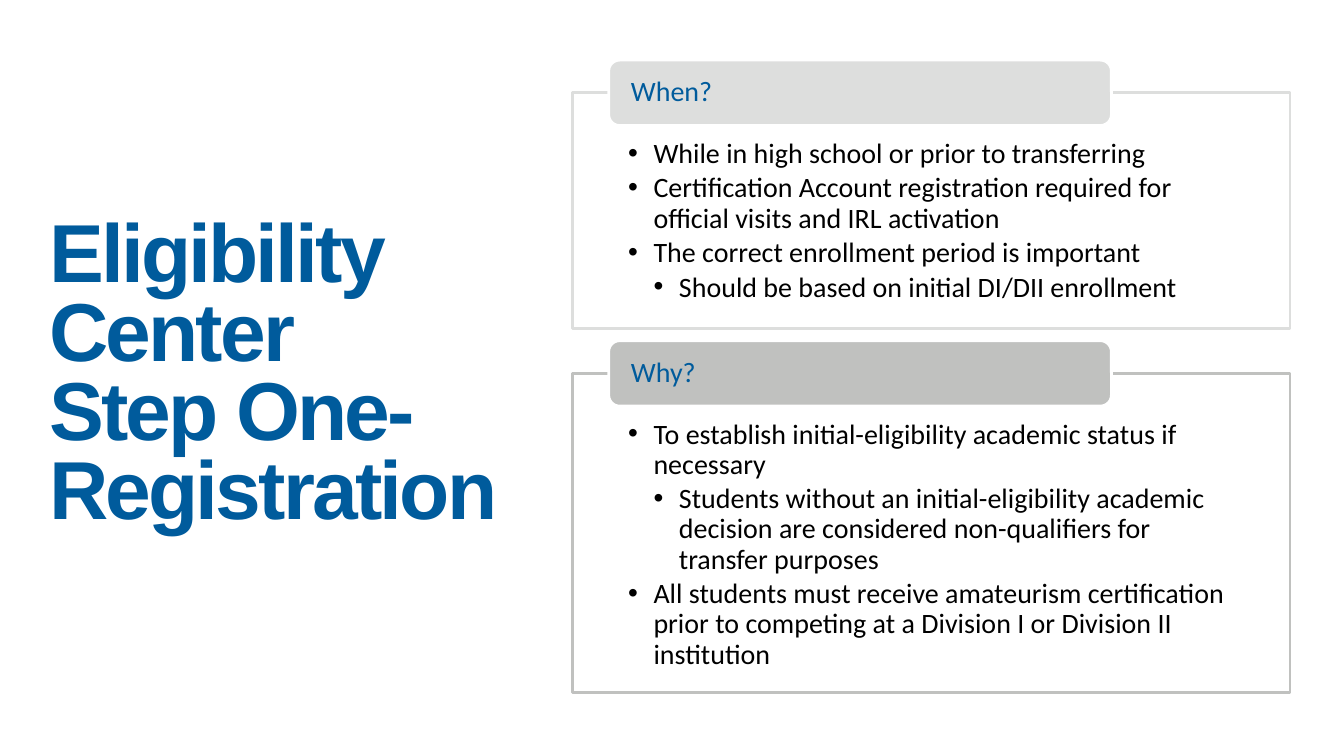
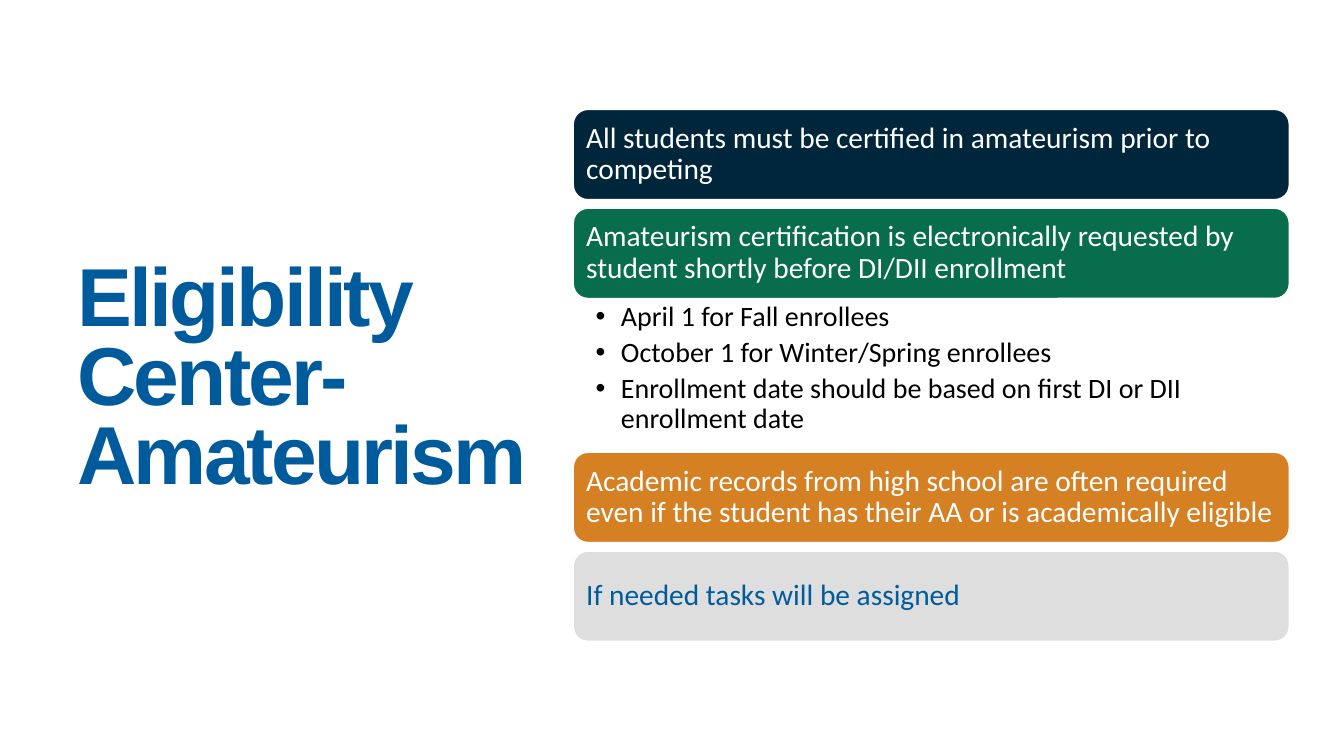
from dataclasses import dataclass

from lxml.etree import SubElement
from pptx import Presentation
from pptx.dml.color import RGBColor
from pptx.enum.shapes import MSO_SHAPE as Preset
from pptx.enum.text import MSO_ANCHOR as Anchor, MSO_AUTO_SIZE as AutoSize, PP_ALIGN as Align
from pptx.oxml.ns import qn
from pptx.util import Cm, Pt


@dataclass(frozen=True)
class Theme:
    blue: str = "005B9C"
    navy: str = "00263B"
    green: str = "086D4D"
    orange: str = "D68024"
    light_gray: str = "DDDEDD"
    mid_gray: str = "C0C1BF"
    white: str = "FFFFFF"
    black: str = "000000"
    title_font: str = "Arial"
    body_font: str = "Calibri"
    title_size: float = 58.7
    card_size: float = 21
    body_size: float = 20
    line_width: float = 2
    title_tracking: int = -200
    bullet_indent: float = 0.64


THEME = Theme()
CONTENT_LEFT, CONTENT_WIDTH = 14.43, 18.08


def apply_format(target, values):
    for name, value in values.items():
        setattr(target, name, value)


def format_runs(paragraph, font_name, size, color, bold=False):
    for run in paragraph.runs:
        apply_format(run.font, {"name": font_name, "size": Pt(size), "bold": bold})
        run.font.color.rgb = RGBColor.from_string(color)


def set_frame(frame, anchor, insets=(0.25, 0.13, 0.25, 0.13)):
    """Insets are left, top, right and bottom, in centimetres."""
    sides = ("margin_left", "margin_top", "margin_right", "margin_bottom")
    apply_format(frame, {"word_wrap": True, "auto_size": AutoSize.NONE, "vertical_anchor": anchor})
    apply_format(frame, dict(zip(sides, map(Cm, insets))))


def add_title(slide, box, text):
    title = slide.shapes.title
    apply_format(title, dict(zip(("left", "top", "width", "height"), map(Cm, box))))
    set_frame(title.text_frame, Anchor.MIDDLE)
    paragraph = title.text_frame.paragraphs[0]
    paragraph.text = text
    apply_format(paragraph, {"alignment": Align.LEFT, "line_spacing": 0.8})
    format_runs(paragraph, THEME.title_font, THEME.title_size, THEME.blue, bold=True)
    for run in paragraph.runs:
        run.font._element.set("spc", str(THEME.title_tracking))


def add_box(slide, preset, box, fill, line):
    shape = slide.shapes.add_shape(preset, *map(Cm, box))
    shape.shadow.inherit = False
    shape.fill.solid()
    shape.fill.fore_color.rgb = RGBColor.from_string(fill)
    shape.line.color.rgb = RGBColor.from_string(line)
    shape.line.width = Pt(THEME.line_width)
    return shape


def add_label(slide, box, text, fill, color, size, insets):
    """Rounded box with one left-aligned statement."""
    shape = add_box(slide, Preset.ROUNDED_RECTANGLE, box, fill, THEME.white)
    set_frame(shape.text_frame, Anchor.MIDDLE, insets)
    paragraph = shape.text_frame.paragraphs[0]
    paragraph.text = text
    apply_format(paragraph, {"alignment": Align.LEFT, "line_spacing": 0.9})
    format_runs(paragraph, THEME.body_font, size, color)


def write_bullets(frame, items, space_after):
    """Items are (level, text) pairs; the first level is 1."""
    for index, (level, text) in enumerate(items):
        paragraph = frame.add_paragraph() if index else frame.paragraphs[0]
        paragraph.text = text
        paragraph.level = level
        properties = paragraph._p.get_or_add_pPr()
        properties.set("marL", str(Cm(THEME.bullet_indent * level)))
        properties.set("indent", str(-Cm(THEME.bullet_indent)))
        SubElement(properties, qn("a:buFont"), typeface=THEME.title_font)
        SubElement(properties, qn("a:buChar"), char="•")
        apply_format(paragraph, {"alignment": Align.LEFT, "line_spacing": 0.9,
                                 "space_before": Pt(0), "space_after": Pt(space_after)})
        format_runs(paragraph, THEME.body_font, THEME.body_size, THEME.black)


def add_panel(slide, box, heading, items, color):
    """Outlined box with bullets and a heading label across its top edge."""
    left, top, _, _ = box
    panel = add_box(slide, Preset.RECTANGLE, box, THEME.white, color)
    set_frame(panel.text_frame, Anchor.TOP, (1.4, 1.17, 1.4, 0.41))
    write_bullets(panel.text_frame, items, 3)
    label_height = 1.65
    add_label(slide, (left + 0.91, top - label_height / 2, 12.67, label_height), heading,
              color, THEME.blue, THEME.body_size, (0.48, 0, 0.48, 0))


def add_bullet_list(slide, box, items):
    text_box = slide.shapes.add_textbox(*map(Cm, box))
    set_frame(text_box.text_frame, Anchor.TOP, (0.58, 0.08, 0.41, 0.08))
    write_bullets(text_box.text_frame, items, 4)


def build_registration(slide):
    add_title(slide, (0.99, 1.88, 11.91, 15.27), "Eligibility Center \vStep One-Registration")
    panels = (
        ("When?", THEME.light_gray, 5.94, (
            (1, "While in high school or prior to transferring"),
            (1, "Certification Account registration required for official visits and IRL activation"),
            (1, "The correct enrollment period is important"),
            (2, "Should be based on initial DI/DII enrollment"))),
        ("Why?", THEME.mid_gray, 8.05, (
            (1, "To establish initial-eligibility academic status if necessary"),
            (2, "Students without an initial-eligibility academic decision are considered "
                "non-qualifiers for transfer purposes"),
            (1, "All students must receive amateurism certification prior to competing "
                "at a Division I or Division II institution"))),
    )
    top, gap = 2.34, 1.13
    for heading, color, height, items in panels:
        add_panel(slide, (CONTENT_LEFT, top, CONTENT_WIDTH, height), heading, items, color)
        top += height + gap


def build_amateurism(slide):
    add_title(slide, (1.7, 2.82, 11.89, 13.59), "Eligibility Center-Amateurism")
    cards = (
        ("All students must be certified in amateurism prior to competing",
         THEME.navy, THEME.white, ()),
        ("Amateurism certification is electronically requested by student shortly "
         "before DI/DII enrollment", THEME.green, THEME.white, (
             (1, "April 1 for Fall enrollees"),
             (1, "October 1 for Winter/Spring enrollees"),
             (1, "Enrollment date should be based on first DI or DII enrollment date"))),
        ("Academic records from high school are often required even if the student "
         "has their AA or is academically eligible", THEME.orange, THEME.white, ()),
        ("If needed tasks will be assigned", THEME.light_gray, THEME.blue, ()),
    )
    top, card_height, list_height, gap = 2.74, 2.31, 3.84, 0.18
    for text, fill, color, items in cards:
        add_label(slide, (CONTENT_LEFT, top, CONTENT_WIDTH, card_height), text,
                  fill, color, THEME.card_size, (0.23,) * 4)
        top += card_height
        if items:
            add_bullet_list(slide, (CONTENT_LEFT, top, CONTENT_WIDTH, list_height), items)
            top += list_height
        else:
            top += gap


def main():
    presentation = Presentation()
    apply_format(presentation, {"slide_width": Cm(33.87), "slide_height": Cm(19.05)})
    title_only = presentation.slide_layouts[5]
    for build in (build_registration, build_amateurism):
        build(presentation.slides.add_slide(title_only))
    presentation.save("out.pptx")


if __name__ == "__main__":
    main()
